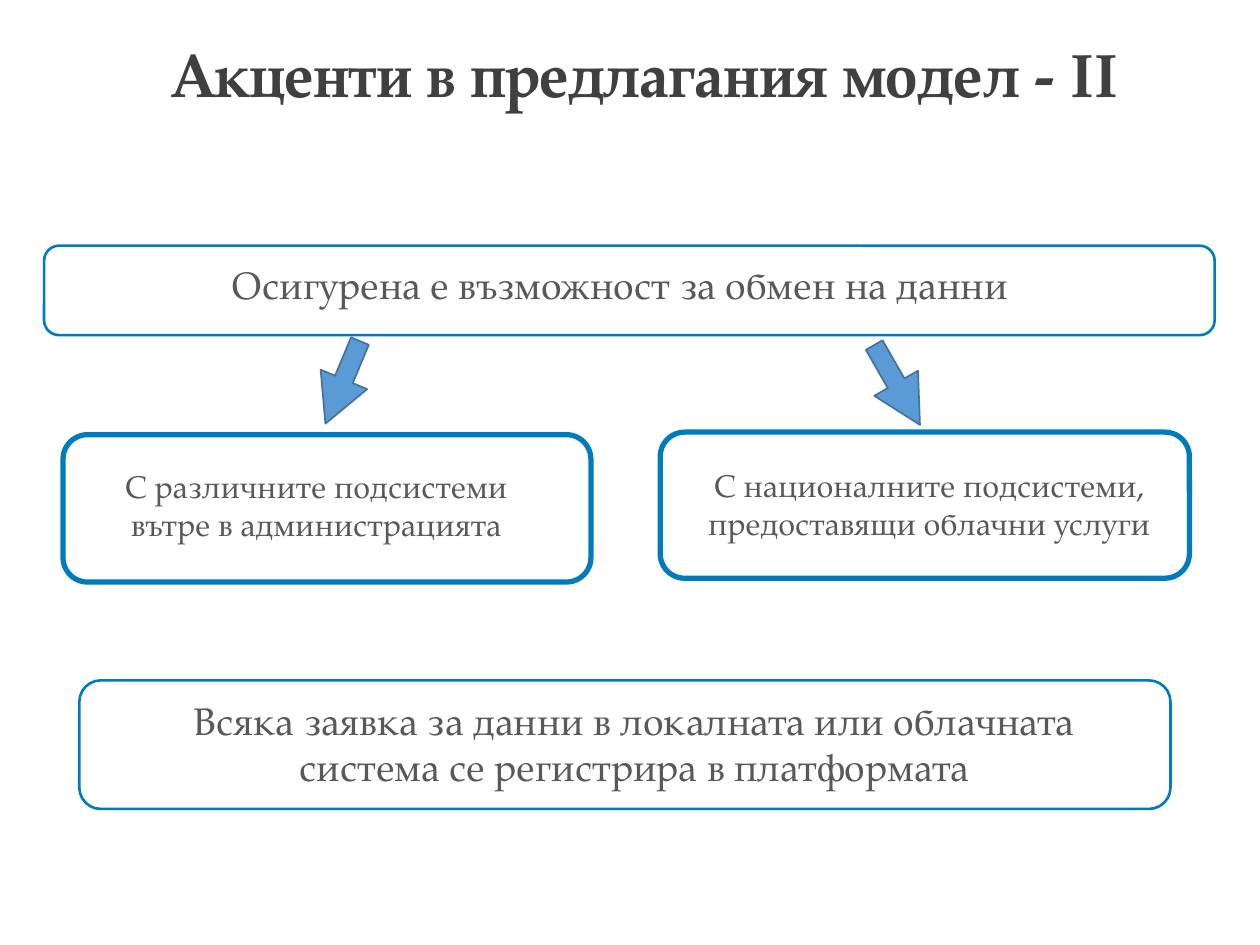
from pptx import Presentation
from pptx.dml.color import RGBColor
from pptx.enum.shapes import MSO_SHAPE
from pptx.enum.text import MSO_ANCHOR, PP_ALIGN
from pptx.util import Pt

PX = 9144
FONT = "TeX Gyre Pagella"
WHITE = RGBColor(0xFF, 0xFF, 0xFF)
BORDER = RGBColor(0x00, 0x7C, 0xBE)
ARROW_FILL = RGBColor(0x5B, 0x9B, 0xD5)
ARROW_LINE = RGBColor(0x43, 0x73, 0x9E)
TITLE_COLOR = RGBColor(0x40, 0x40, 0x40)
TEXT_COLOR = RGBColor(0x59, 0x59, 0x59)
ROUNDED = MSO_SHAPE.ROUNDED_RECTANGLE
DOWN_ARROW = MSO_SHAPE.DOWN_ARROW
CENTER = PP_ALIGN.CENTER
LEFT = PP_ALIGN.LEFT
TOP = MSO_ANCHOR.TOP
MIDDLE = MSO_ANCHOR.MIDDLE


def emu(box):
    return [value * PX for value in box]


def add_text(page, box, text, size, color, align=CENTER, anchor=TOP):
    frame = page.shapes.add_textbox(*emu(box)).text_frame
    frame.word_wrap = True
    frame.vertical_anchor = anchor
    frame.text = text
    para = frame.paragraphs[0]
    para.alignment = align
    span = para.runs[0]
    span.font.name = FONT
    span.font.size = Pt(size)
    span.font.color.rgb = color
    return para


def add_figure(page, kind, box, fill, line, weight):
    figure = page.shapes.add_shape(kind, *emu(box))
    figure.shadow.inherit = False
    figure.fill.solid()
    figure.fill.fore_color.rgb = fill
    figure.line.color.rgb = line
    figure.line.width = Pt(weight)
    return figure


def add_title(page, box, text):
    para = add_text(page, box, text, 35, TITLE_COLOR, LEFT, MIDDLE)
    para.line_spacing = 0.9
    para.runs[0].font.bold = True


def add_panel(page, box, inset, text, size, weight):
    add_figure(page, ROUNDED, box, WHITE, BORDER, weight)
    left, top = box[:2]
    dx, dy, width, height = inset
    add_text(page, (left + dx, top + dy, width, height), text, size, TEXT_COLOR)


def add_arrow(page, box, angle):
    arrow = add_figure(page, DOWN_ARROW, box, ARROW_FILL, ARROW_LINE, 1)
    arrow.adjustments[0] = 0.38
    arrow.adjustments[1] = 0.95
    arrow.rotation = angle


def main():
    deck = Presentation()
    deck.slide_width, deck.slide_height = 1000 * PX, 750 * PX
    page = deck.slides.add_slide(deck.slide_layouts[6])

    add_title(page, (126, 4, 862, 115), "Акценти в предлагания модел - II")
    add_panel(page, (63, 540, 866, 102), (38, 8, 805, 84),
              "Всяка заявка за данни в локалната или облачната система "
              "се регистрира в платформата", 22, 1.5)
    add_panel(page, (35, 195, 929, 71), (16, 7, 882, 47),
              "Осигурена е възможност за обмен на данни", 22, 1.5)
    add_panel(page, (50, 345, 419, 117), (15, 21, 372, 71),
              "С различните подсистеми вътре в администрацията", 18, 3)
    add_panel(page, (524, 343, 420, 116), (16, 22, 395, 71),
              "С националните подсистеми, предоставящи облачни услуги", 18, 3)
    add_arrow(page, (252, 268, 40, 71), 22.7)
    add_arrow(page, (692, 269, 40, 73), 330.2)

    deck.save("out.pptx")


if __name__ == "__main__":
    main()
